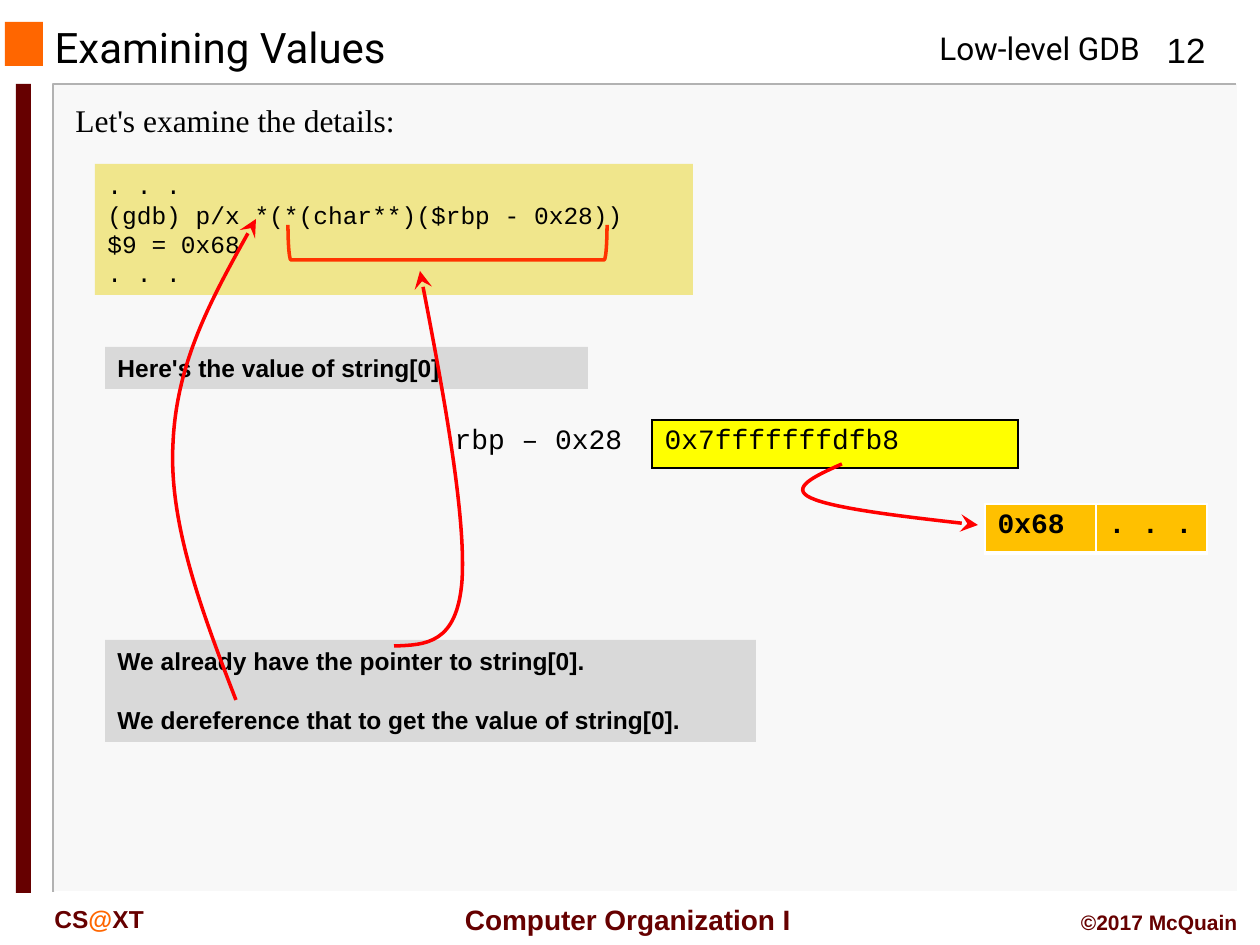
"""Build the GDB slide that examines the value of string[0]."""
import lxml.etree
import pptx
import pptx.dml.color
import pptx.enum.shapes
import pptx.enum.text
import pptx.oxml.ns
import pptx.util

EMU_PER_PX = 914400 / 126
COLORS = {
    "black": "000000", "white": "FFFFFF", "panel": "F8F8F8", "edge": "B2B2B2",
    "orange": "FF6600", "maroon": "660000", "khaki": "F0E68C", "grey": "D9D9D9",
    "yellow": "FFFF00", "amber": "FFC000", "red": "FF0000", "bracket": "FF3300",
}
ALIGN = pptx.enum.text.PP_ALIGN
ANCHOR = pptx.enum.text.MSO_ANCHOR
SHAPE = pptx.enum.shapes.MSO_SHAPE
qn = pptx.oxml.ns.qn


def px(length):
    """Convert pixels to EMU."""
    return pptx.util.Emu(round(length * EMU_PER_PX))


def rgb(color):
    """Return the named colour."""
    return pptx.dml.color.RGBColor.from_string(COLORS[color])


def add_run(paragraph, text, font, size, color="black", bold=False):
    """Append one formatted run."""
    run = paragraph.add_run()
    run.text = text
    run.font.name = font
    run.font.size = pptx.util.Pt(size)
    run.font.bold = bold
    run.font.color.rgb = rgb(color)


def add_label(slide, box, runs, font, size, bold=False, align=ALIGN.LEFT, anchor=ANCHOR.TOP):
    """Add a one-line text box from (text, colour) runs."""
    frame = slide.shapes.add_textbox(*map(px, box)).text_frame
    frame.word_wrap = True
    frame.vertical_anchor = anchor
    frame.paragraphs[0].alignment = align
    for text, color in runs:
        add_run(frame.paragraphs[0], text, font, size, color, bold)


def add_block(slide, box, color):
    """Add a plain filled rectangle."""
    block = slide.shapes.add_shape(SHAPE.RECTANGLE, *map(px, box))
    block.shadow.inherit = False
    block.fill.solid()
    block.fill.fore_color.rgb = rgb(color)
    block.line.fill.background()
    return block


def add_note(slide, box, color, lines, font, bold=False, gap=0):
    """Add a filled rectangle holding lines of text."""
    frame = add_block(slide, box, color).text_frame
    frame.word_wrap = True
    frame.vertical_anchor = ANCHOR.TOP
    for index, line in enumerate(lines):
        paragraph = frame.add_paragraph() if index else frame.paragraphs[0]
        paragraph.alignment = ALIGN.LEFT
        paragraph.line_spacing = pptx.util.Pt(16.8)
        paragraph.space_before = pptx.util.Pt(gap if index else 0)
        add_run(paragraph, line, font, 14, bold=bold)


def add_outline(slide, points, color, width):
    """Add an open, unfilled line through the points."""
    builder = slide.shapes.build_freeform(*points[0], scale=EMU_PER_PX)
    builder.add_line_segments(points[1:], close=False)
    outline = builder.convert_to_shape()
    outline.shadow.inherit = False
    outline.fill.background()
    outline.line.color.rgb = rgb(color)
    outline.line.width = pptx.util.Pt(width)
    return outline


def add_curved_arrow(slide, points):
    """Add a red Bézier arrow whose points follow the start in threes."""
    arrow = add_outline(slide, points, "red", 2)
    track = arrow.element.find(".//" + qn("a:path"))
    segments = track.findall(qn("a:lnTo"))
    for start in range(0, len(segments), 3):
        curve = lxml.etree.SubElement(track, qn("a:cubicBezTo"))
        for segment in segments[start:start + 3]:
            curve.append(segment[0])
            track.remove(segment)
    stroke = arrow.element.spPr.find(qn("a:ln"))
    lxml.etree.SubElement(stroke, qn("a:tailEnd"), type="stealth", w="lg", len="lg")


def set_borders(cell, borders):
    """Draw the (colour, points) border of each side, or none."""
    properties = cell._tc.get_or_add_tcPr()
    for index, side in enumerate("LRTB"):
        color, width = borders.get(side, (None, 1))
        border = lxml.etree.Element(qn("a:ln" + side), w=str(pptx.util.Pt(width)))
        if color:
            fill = lxml.etree.SubElement(border, qn("a:solidFill"))
            lxml.etree.SubElement(fill, qn("a:srgbClr"), val=COLORS[color])
        else:
            lxml.etree.SubElement(border, qn("a:noFill"))
        properties.insert(index, border)


def add_memory_row(slide, box, widths, cells, bold=False):
    """Add a one-row table from (text, fill, borders) cells."""
    table = slide.shapes.add_table(1, len(cells), *map(px, box)).table
    table.first_row = table.horz_banding = False
    for index, (text, color, borders) in enumerate(cells):
        table.columns[index].width = px(widths[index])
        cell = table.cell(0, index)
        add_run(cell.text_frame.paragraphs[0], text, "Courier New", 16, bold=bold)
        if color:
            cell.fill.solid()
            cell.fill.fore_color.rgb = rgb(color)
        else:
            cell.fill.background()
        set_borders(cell, borders)


def add_bracket(slide, box):
    """Add the bracket that opens upwards under the expression."""
    bracket = slide.shapes.add_shape(SHAPE.LEFT_BRACKET, *map(px, box))
    bracket.shadow.inherit = False
    bracket.rotation = 270
    bracket.fill.background()
    bracket.line.color.rgb = rgb("bracket")
    bracket.line.width = pptx.util.Pt(2)


def add_title(slide, box, text):
    """Place and format the title placeholder."""
    title = slide.shapes.title
    title.left, title.top, title.width, title.height = map(px, box)
    title.text_frame.vertical_anchor = ANCHOR.MIDDLE
    title.text_frame.paragraphs[0].alignment = ALIGN.LEFT
    add_run(title.text_frame.paragraphs[0], text, "Roboto", 24)


def add_frame(slide):
    """Add the panel, side bar, header and footer."""
    add_block(slide, (54, 84, 1184, 808), "panel")
    add_outline(slide, [(1236, 84), (53, 84), (53, 892)], "edge", 1)
    add_outline(slide, [(1238, 84), (1238, 892), (55, 892)], "white", 1)
    add_block(slide, (5, 22, 38, 44), "orange")
    add_block(slide, (16, 84, 15, 809), "maroon")
    add_label(slide, (927, 23, 238, 50), [("Low-level GDB", "black")], "Roboto", 18)
    add_label(slide, (438, 896, 372, 47), [(" Computer Organization I", "maroon")],
              "Arial", 16, True, ALIGN.CENTER, ANCHOR.MIDDLE)
    add_label(slide, (1144, 22, 84, 54), [("12", "black")], "Arial", 20, align=ALIGN.CENTER)
    add_label(slide, (42, 898, 189, 42),
              [("CS", "maroon"), ("@", "orange"), ("XT", "maroon")], "Arial", 14, True)
    add_label(slide, (882, 903, 368, 38), [("©2017 McQuain", "maroon")],
              "Arial", 12, True, ALIGN.RIGHT)


def main():
    """Build and save the slide."""
    deck = pptx.Presentation()
    deck.slide_width, deck.slide_height = px(1260), px(945)
    slide = deck.slides.add_slide(deck.slide_layouts[5])
    add_frame(slide)
    add_title(slide, (42, 23, 798, 48), "Examining Values")
    add_label(slide, (63, 95, 1166, 50), [("Let's examine the details:", "black")],
              "Times New Roman", 18)
    black_box = dict.fromkeys("LRTB", ("black", 1))
    white_box = dict.fromkeys("LRT", ("white", 1)) | {"B": ("white", 3)}
    add_memory_row(slide, (442, 420, 576, 48), (210, 366),
                   [("rbp – 0x28", None, {"R": ("black", 1)}),
                    ("0x7fffffffdfb8", "yellow", black_box)])
    add_memory_row(slide, (985, 504, 222, 49), (111, 111),
                   [("0x68", "amber", white_box), (". . .", "amber", white_box)], True)
    add_note(slide, (95, 164, 598, 131), "khaki",
             [". . .", "(gdb) p/x *(*(char**)($rbp - 0x28))", "$9 = 0x68", ". . ."],
             "Courier New")
    add_curved_arrow(slide, [(842, 464), (815, 476), (789, 488), (811, 498),
                             (833, 508), (905, 517), (978, 525)])
    add_note(slide, (105, 347, 483, 42), "grey", ["Here's the value of string[0]"],
             "Arial", True)
    add_note(slide, (105, 640, 651, 102), "grey",
             ["We already have the pointer to string[0].",
              "We dereference that to get the value of string[0]."], "Arial", True, 16.8)
    add_curved_arrow(slide, [(236, 700), (202, 612), (169, 524), (173, 445),
                             (176, 364), (215, 292), (256, 219)])
    add_bracket(slide, (430, 83, 35, 319))
    add_curved_arrow(slide, [(394, 646), (426, 645), (457, 644), (462, 581),
                             (466, 519), (444, 394), (420, 271)])
    deck.save("out.pptx")


if __name__ == "__main__":
    main()
